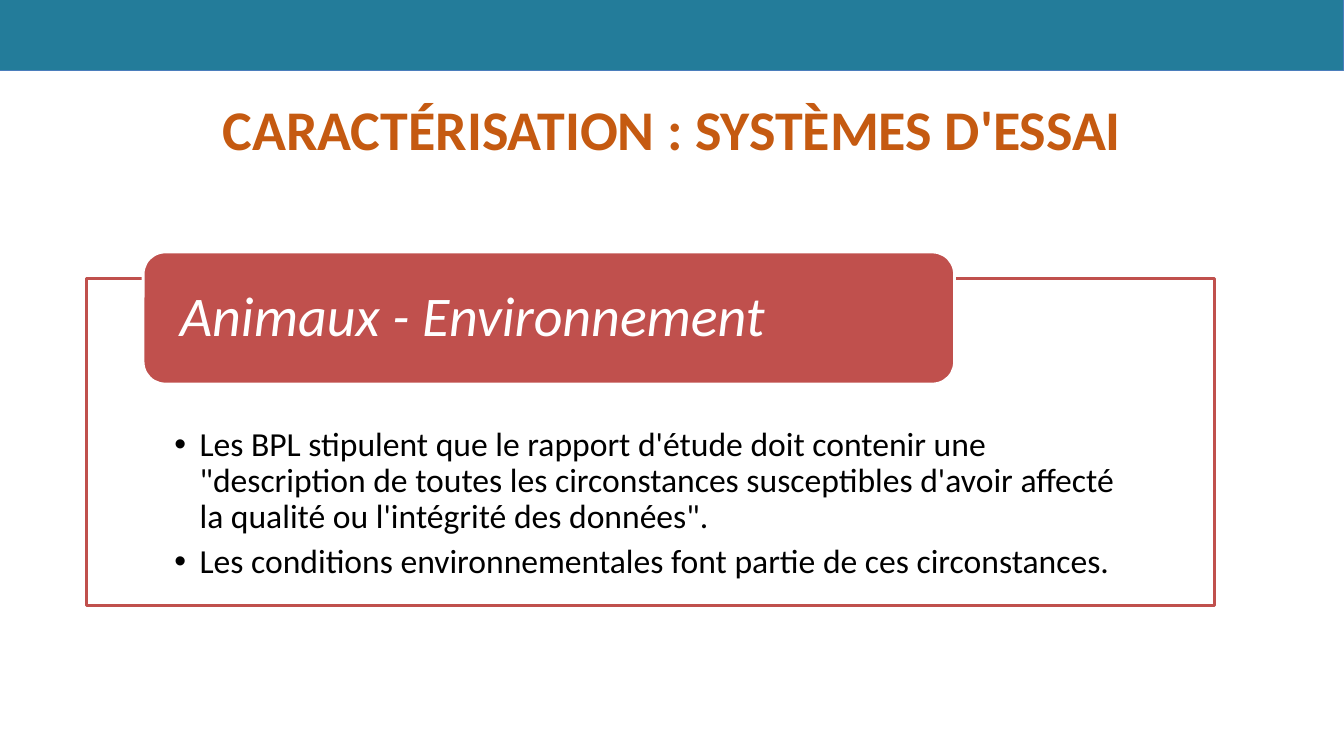
from lxml import etree
from pptx import Presentation
from pptx import util as u
from pptx.dml.color import RGBColor
from pptx.enum import shapes, text
from pptx.oxml.ns import qn

COLORS = {"teal": "237C9A", "blue": "4B7EBC", "orange": "C55A11",
          "red": "C0504D", "white": "FFFFFF", "black": "000000"}

deck = Presentation()
deck.slide_width, deck.slide_height = u.Inches(13.33), u.Inches(7.5)
page = deck.slides.add_slide(deck.slide_layouts[6])

# Grid of 160 columns by 90 rows
COL, ROW = deck.slide_width / 160, deck.slide_height / 90


def add_panel(preset, left, top, width, height, fill, line, weight):
    panel = page.shapes.add_shape(preset, int(left * COL), int(top * ROW),
                                  int(width * COL), int(height * ROW))
    panel.shadow.inherit = False
    panel.fill.solid()
    panel.fill.fore_color.rgb = RGBColor.from_string(COLORS[fill])
    panel.line.color.rgb = RGBColor.from_string(COLORS[line])
    panel.line.width = u.Pt(weight)
    return panel


def write(box, lines, insets, anchor, layout, style, color, bullet=None):
    frame = box.text_frame
    frame.word_wrap = True
    frame.vertical_anchor = anchor
    sides = ("left", "top", "right", "bottom")
    for side, inset, unit in zip(sides, insets, (COL, ROW, COL, ROW)):
        setattr(frame, f"margin_{side}", int(inset * unit))
    for index, line in enumerate(lines):
        para = frame.paragraphs[0] if index == 0 else frame.add_paragraph()
        for name, value in layout.items():
            setattr(para, name, value)
        if bullet:
            props = para._p.get_or_add_pPr()
            props.set("marL", str(u.Inches(0.25)))
            props.set("indent", str(-u.Inches(0.25)))
            etree.SubElement(props, qn("a:buFont"), typeface="Arial")
            etree.SubElement(props, qn("a:buChar"), char=bullet)
        span = para.add_run()
        span.text = line
        span.font.name = "Calibri"
        span.font.color.rgb = RGBColor.from_string(COLORS[color])
        for name, value in style.items():
            setattr(span.font, name, value)


# Top band
RECT, ROUNDED = shapes.MSO_SHAPE.RECTANGLE, shapes.MSO_SHAPE.ROUNDED_RECTANGLE
add_panel(RECT, 0, 0, 160, 8.4, "teal", "blue", 0.75)

# Title
title = page.shapes.add_textbox(int(8 * COL), int(10.68 * ROW),
                                int(144 * COL), int(7.8 * ROW))
write(title, ["CARACTÉRISATION : SYSTÈMES D'ESSAI"], (1.2, 0.6, 1.2, 0),
      text.MSO_ANCHOR.TOP, {"alignment": text.PP_ALIGN.CENTER},
      {"size": u.Pt(40), "bold": True}, "orange")

# Outlined body with bullets
body = add_panel(RECT, 10.32, 33.12, 134.28, 39, "white", "red", 2)
body_color = body._element.spPr.find(qn("a:solidFill"))[0]
etree.SubElement(body_color, qn("a:alpha"), val="90000")
write(body,
      ["Les BPL stipulent que le rapport d'étude doit contenir une "
       "\"description de toutes les circonstances susceptibles d'avoir "
       "affecté la qualité ou l'intégrité des données\".",
       "Les conditions environnementales font partie de ces circonstances."],
      (10.44, 17.76, 10.44, 2.28), text.MSO_ANCHOR.TOP,
      {"alignment": text.PP_ALIGN.LEFT, "line_spacing": 0.9,
       "space_after": u.Pt(6)},
      {"size": u.Pt(24)}, "black", bullet="•")

# Heading label over the body's top edge
label = add_panel(ROUNDED, 17.04, 30, 96.6, 15.72, "red", "white", 2)
write(label, ["Animaux - Environnement"], (3.6, 0, 3.6, 0),
      text.MSO_ANCHOR.MIDDLE,
      {"alignment": text.PP_ALIGN.LEFT, "line_spacing": 0.9},
      {"size": u.Pt(40), "italic": True}, "white")

deck.save("out.pptx")
